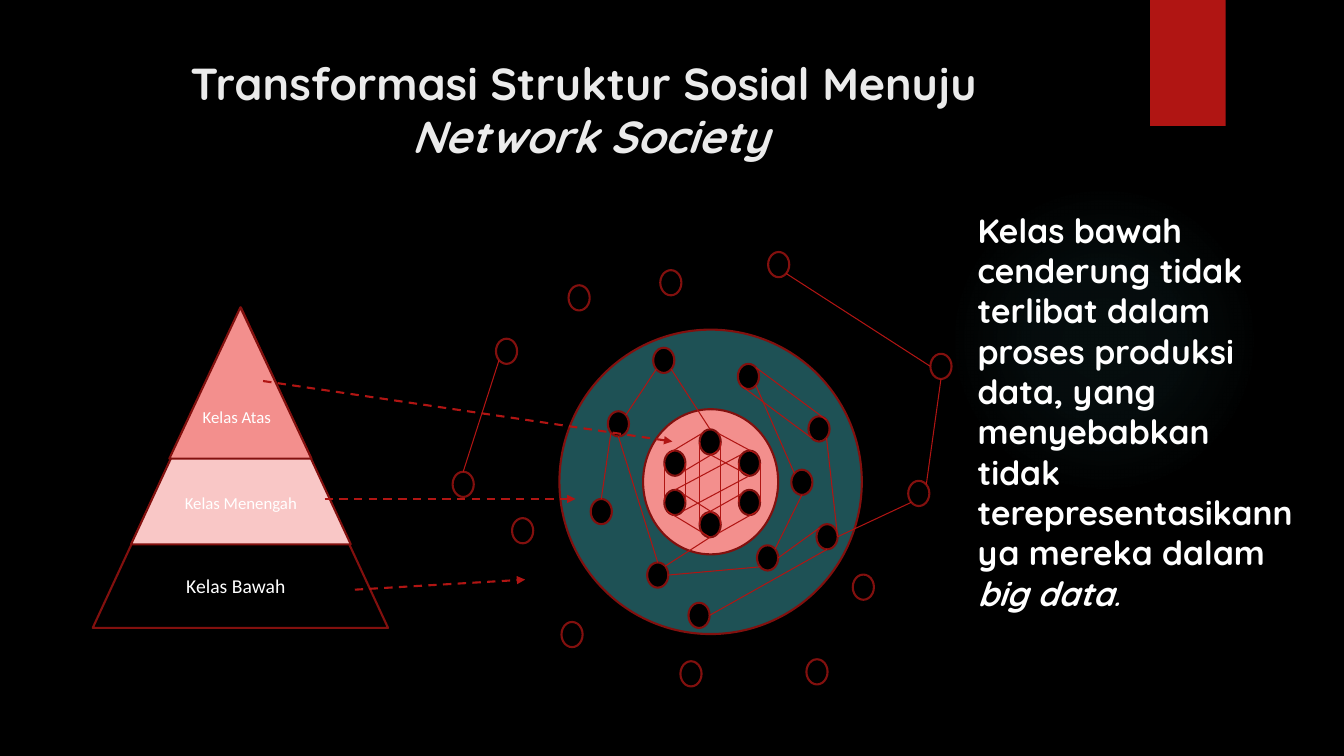
from lxml import etree
from pptx import Presentation, util as u
from pptx.dml.color import RGBColor
from pptx.enum import dml, shapes, text
from pptx.oxml import parse_xml
from pptx.oxml.ns import nsdecls, qn

CELL = u.Inches(0.1)  # one column wide, one row high
COLUMNS, ROWS = 133.33, 75
NODE_WIDTH, NODE_HEIGHT = 2.1, 2.5

BLACK, WHITE, TITLE_GREY = "000000", "FFFFFF", "EBEBEB"
RED, DARK_RED, TEAL = "B01513", "82100E", "1E5155"
ROSE, PALE_ROSE, GLOW = "F38F8D", "F9C7C6", "50B9C1"

# A: the core, B: the middle ring, C: outside the network (left, top)
NODES = {
    "A": [(69.4, 42.6), (73.3, 44.7), (73.3, 48.6),
          (69.4, 50.8), (65.9, 48.6), (65.9, 44.7)],
    "B": [(73.2, 36.1), (80.2, 41.3), (81, 52), (75.1, 54.1), (78.5, 46.6),
          (64.2, 55.8), (58.6, 49.5), (60.3, 40.8), (64.8, 34.5), (68.3, 59.8)],
    "C": [(49.2, 33.6), (44.9, 46.8), (55.7, 61.7), (76.2, 25), (92.3, 35.1),
          (90.1, 47.7), (84.6, 57), (50.8, 51.4), (56.4, 28.3), (65.5, 26.8),
          (67.5, 65.6), (80, 65.4)],
}
# Each link: node, side, node, side
LINKS = """
A1 NE A2 NE, A1 S A2 S, A1 NW A6 NW, A6 SE A1 SE, A6 W A5 W, A6 E A5 E,
A5 SW A4 S, A5 NE A4 NE, A3 NW A4 NW, A4 SE A3 SE, A3 W A2 W, A2 E A3 E,
A1 W A4 W, A1 E A4 E, A5 N A2 NW, A5 SE A2 S,
B1 SW B2 SW, B1 NE B2 NE, B2 SE B3 E, B1 SE B5 NW, B5 S B4 NE, B4 SW B6 E,
B10 E B3 S, B4 E B3 NW, B6 N B8 S, B7 N B8 SW, B8 NE B9 SW,
C2 N C1 SW, C4 SE C5 W, C5 S C6 NE, A1 N B9 SE, A4 S B6 NE, B3 E C6 SW
"""
CLASSES = [  # triangle, fill, label, label box, label size
    ((9.2, 30.7, 29.3, 31.6), BLACK, "Kelas Bawah", (16.9, 56.3, 13, 3.7), 14),
    ((13, 30.5, 21.8, 23.5), PALE_ROSE, "Kelas Menengah", (15.5, 48.3, 16.8, 3.7), 12),
    ((16.8, 30.5, 14.1, 15), ROSE, "Kelas Atas", (17.7, 39.7, 11.6, 3.7), 12),
]
MOVES = [((26.1, 37.8), (66.7, 43.8)),
         ((32.2, 49.5), (57.1, 49.5)),
         ((35.2, 58.5), (52.1, 57.5))]


def colour(hex_string):
    return RGBColor.from_string(hex_string)


def cells(lengths):
    return [u.Emu(round(length * CELL)) for length in lengths]


def side_point(corner, side):
    """Point on a node's outline in a compass direction."""
    across = ("E" in side) - ("W" in side)
    down = ("S" in side) - ("N" in side)
    reach = 0.5 * (0.71 if across and down else 1)
    left, top = corner
    return (left + NODE_WIDTH * (0.5 + reach * across),
            top + NODE_HEIGHT * (0.5 + reach * down))


class SlideBuilder:
    def __init__(self, deck):
        self.slide = deck.slides.add_slide(deck.slide_layouts[6])
        background = self.slide.background.fill
        background.solid()
        background.fore_color.rgb = colour(BLACK)

    def shape(self, kind, box, fill, outline=None):
        shape = self.slide.shapes.add_shape(kind, *cells(box))
        shape.shadow.inherit = False
        shape.fill.solid()
        shape.fill.fore_color.rgb = colour(fill)
        if outline:
            shape.line.color.rgb = colour(outline)
            shape.line.width = u.Pt(1.5)
        else:
            shape.line.fill.background()
        return shape

    def glow(self, box, tint, stops):
        """Circle fading outwards; stops are (position %, opacity %)."""
        circle = self.shape(shapes.MSO_SHAPE.OVAL, box, tint)
        marks = "".join(
            f'<a:gs pos="{position * 1000}"><a:srgbClr val="{tint}">'
            f'<a:alpha val="{opacity * 1000}"/></a:srgbClr></a:gs>'
            for position, opacity in stops)
        gradient = parse_xml(
            f'<a:gradFill {nsdecls("a")}><a:gsLst>{marks}</a:gsLst>'
            '<a:path path="circle"><a:fillToRect l="50000" t="50000" '
            'r="50000" b="50000"/></a:path></a:gradFill>')
        properties = circle.fill._xPr
        properties.replace(properties.find(qn("a:solidFill")), gradient)

    def line(self, start, end, width, arrow=False):
        line = self.slide.shapes.add_connector(
            shapes.MSO_CONNECTOR.STRAIGHT, *cells((*start, *end)))
        line.line.color.rgb = colour(RED)
        line.line.width = u.Pt(width)
        if arrow:
            line.line.dash_style = dml.MSO_LINE.DASH
            etree.SubElement(line.line._ln, qn("a:tailEnd"), type="triangle")
        etree.SubElement(line._element.spPr, qn("a:effectLst"))

    def text(self, box, lines, font, paragraph_format, auto_size=None):
        """Lines are lists of (wording, font changes), parted by line breaks."""
        frame = self.slide.shapes.add_textbox(*cells(box)).text_frame
        frame.word_wrap = True
        if auto_size is not None:
            frame.auto_size = auto_size
        paragraph = frame.paragraphs[0]
        for name, value in paragraph_format.items():
            setattr(paragraph, name, value)
        for number, runs in enumerate(lines):
            if number:
                paragraph.add_line_break()
            for wording, changes in runs:
                run = paragraph.add_run()
                run.text = wording
                style = {**font, **changes}
                run.font.color.rgb = colour(style.pop("tint"))
                for name, value in style.items():
                    setattr(run.font, name, value)


def main():
    deck = Presentation()
    deck.slide_width, deck.slide_height = cells((COLUMNS, ROWS))
    page = SlideBuilder(deck)
    oval = shapes.MSO_SHAPE.OVAL
    centred = {"alignment": text.PP_ALIGN.CENTER}
    quicksand = {"name": "Quicksand", "bold": True}

    page.glow((94.1, 18.3, 30.8, 30.8), GLOW, [(0, 7), (36, 6), (69, 0), (100, 0)])
    page.shape(shapes.MSO_SHAPE.RECTANGLE, (114.1, 0, 7.5, 12.5), RED)
    page.text((7.1, 5, 102.9, 15.3),
              [[("Transformasi Struktur Sosial Menuju ", {})],
               [("Network Society", {"italic": True})]],
              {**quicksand, "size": u.Pt(32), "tint": TITLE_GREY}, centred)

    page.shape(oval, (55.5, 32.7, 30, 30.2), TEAL, DARK_RED)
    page.shape(oval, (63.8, 40.6, 13.4, 14.4), ROSE, DARK_RED)
    corners = {}
    for ring, places in NODES.items():
        for number, corner in enumerate(places, 1):
            corners[f"{ring}{number}"] = corner
            page.shape(oval, (*corner, NODE_WIDTH, NODE_HEIGHT), BLACK, DARK_RED)
    for link in LINKS.split(","):
        first, first_side, second, second_side = link.split()
        page.line(side_point(corners[first], first_side),
                  side_point(corners[second], second_side), 0.75)

    for triangle, fill, *_ in CLASSES:
        page.shape(shapes.MSO_SHAPE.ISOSCELES_TRIANGLE, triangle, fill, DARK_RED)
    for *_, label, box, size in CLASSES:
        page.text(box, [[(label, {})]],
                  {"name": "Calibri", "size": u.Pt(size), "tint": WHITE},
                  {**centred, "line_spacing": 1.07, "space_after": u.Pt(8)})
    for start, end in MOVES:
        page.line(start, end, 1.5, arrow=True)

    page.text((96, 20.3, 33.4, 41.4),
              [[("Kelas bawah cenderung tidak terlibat dalam proses produksi data, "
                 "yang menyebabkan tidak terepresentasikannya mereka dalam ", {}),
                ("big data", {"italic": True}),
                (".", {"italic": True, "size": u.Pt(18)})]],
              {**quicksand, "size": u.Pt(24), "tint": WHITE},
              {"alignment": text.PP_ALIGN.LEFT},
              text.MSO_AUTO_SIZE.SHAPE_TO_FIT_TEXT)
    deck.save("out.pptx")


if __name__ == "__main__":
    main()
